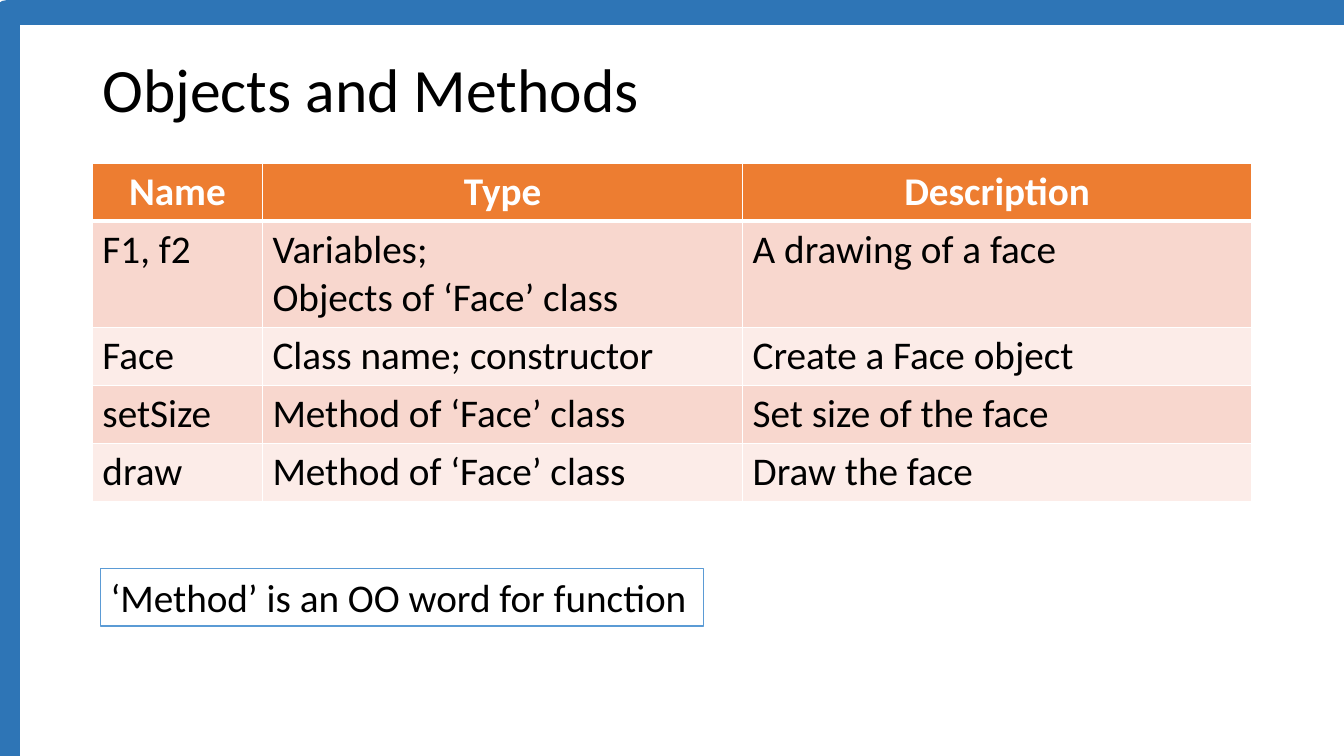
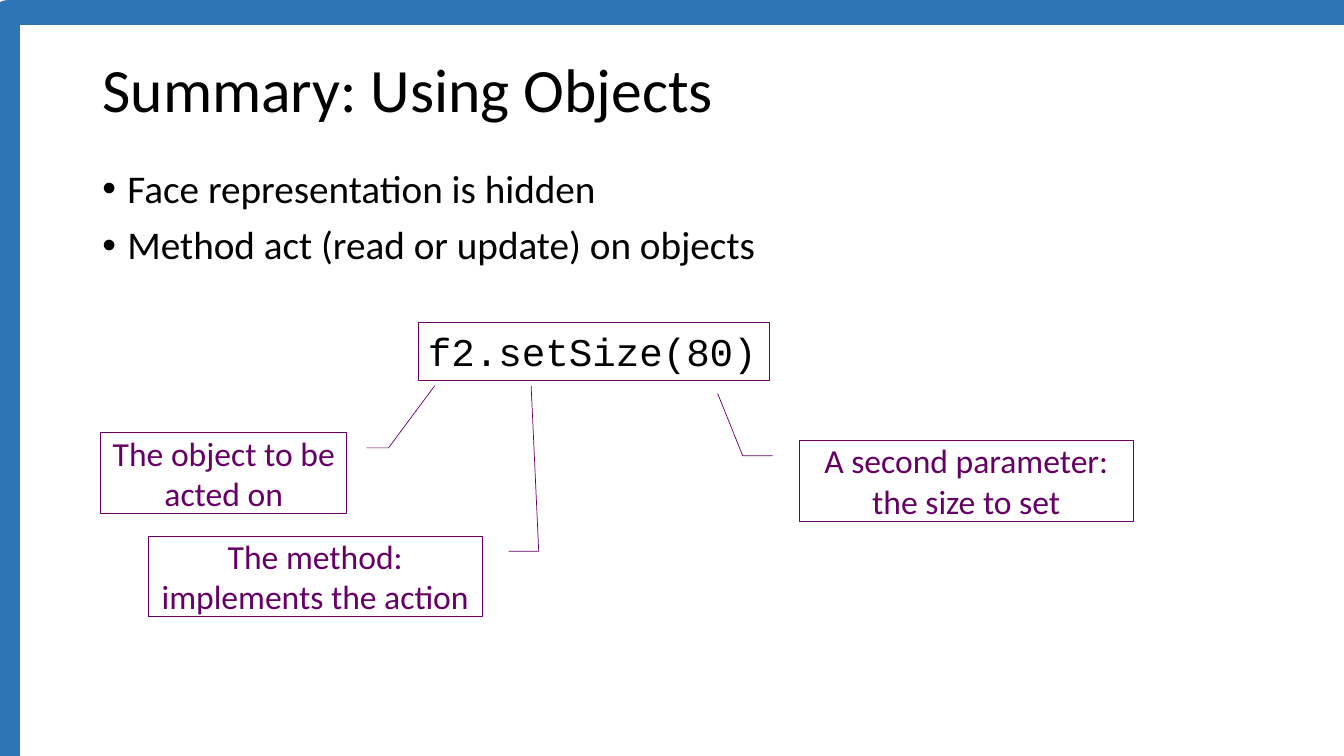
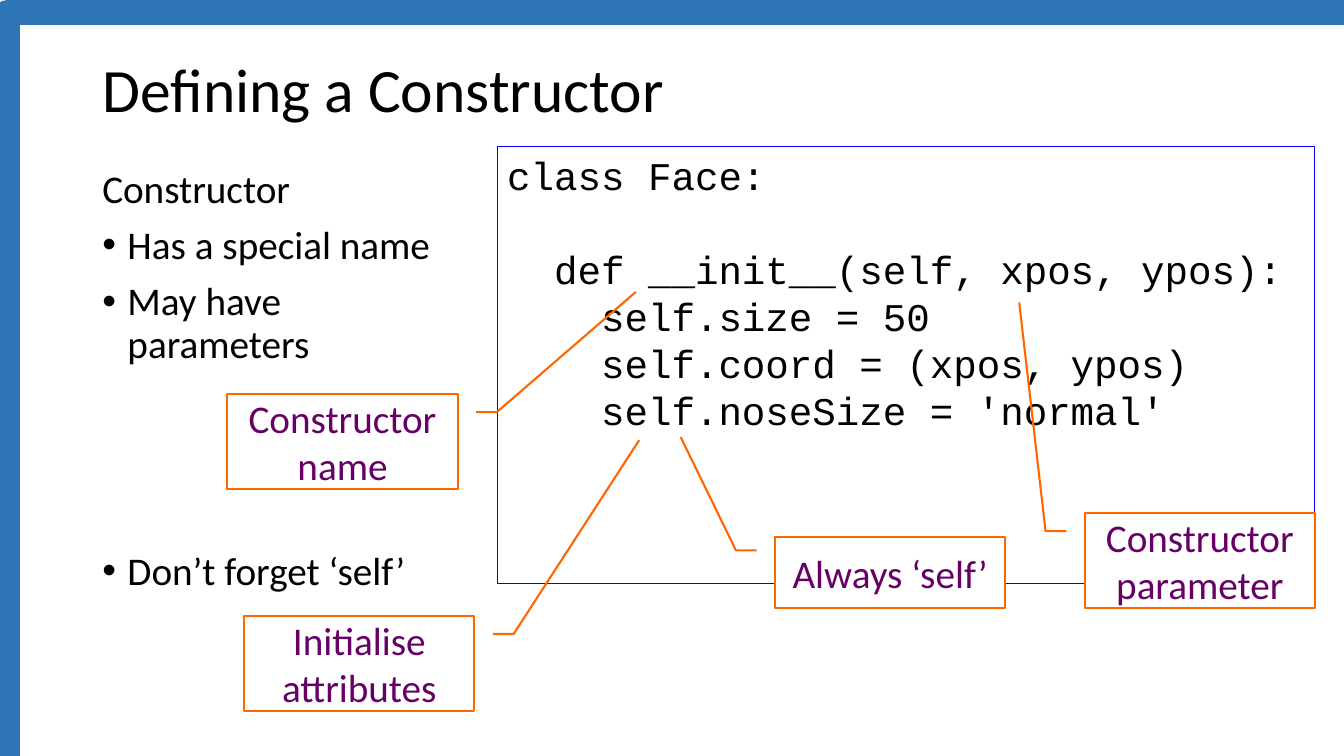
from dataclasses import dataclass
from typing import Optional

from lxml import etree
from pptx import Presentation
from pptx.dml.color import RGBColor
from pptx.enum.shapes import MSO_SHAPE
from pptx.enum.text import MSO_ANCHOR, MSO_AUTO_SIZE, PP_ALIGN
from pptx.oxml.ns import qn
from pptx.shapes.base import BaseShape
from pptx.slide import Slide
from pptx.table import _Cell
from pptx.text.text import TextFrame, _Paragraph
from pptx.util import Pt

RECTANGLE, CALLOUT = MSO_SHAPE.RECTANGLE, MSO_SHAPE.LINE_CALLOUT_2
LEFT, CENTER = PP_ALIGN.LEFT, PP_ALIGN.CENTER
TOP, MIDDLE = MSO_ANCHOR.TOP, MSO_ANCHOR.MIDDLE
FIT_SHAPE, NO_FIT = MSO_AUTO_SIZE.SHAPE_TO_FIT_TEXT, MSO_AUTO_SIZE.NONE

BLACK, WHITE = "000000", "FFFFFF"
FRAME_BLUE, NOTE_BLUE, CODE_BLUE = "2E75B6", "5B9BD5", "0000FF"
PURPLE, ORANGE = "660066", "FF6600"
HEADER_FILL, BAND_FILLS = "ED7D31", ("F8D7CE", "FCECE8")

TITLE_ONLY = 5
MARGIN, CONTENT_WIDTH = 66, 828
BULLET_INDENT = 18
LEADER_HEIGHT, LEADER_START, LEADER_BEND = 0.19, 0.08, 0.17


@dataclass(frozen=True)
class Box:
    left: float
    top: float
    width: float
    height: float

    def lengths(self) -> tuple[Pt, Pt, Pt, Pt]:
        return Pt(self.left), Pt(self.top), Pt(self.width), Pt(self.height)


@dataclass(frozen=True)
class Style:
    size: float = 28
    font: str = "Calibri"
    color: str = BLACK
    bold: bool = False
    align: PP_ALIGN = LEFT
    spacing: Optional[float] = None


@dataclass(frozen=True)
class Line:
    text: str
    space_before: float = 0
    bulleted: bool = False


@dataclass(frozen=True)
class Callout:
    text: str
    box: Box
    tip: tuple[float, float]
    fill: Optional[str] = None


TITLE_STYLE = Style(size=44, spacing=0.9)
BODY_STYLE = Style(spacing=0.9)
CELL_STYLE = Style()
HEADER_STYLE = Style(color=WHITE, bold=True, align=CENTER)
CODE_STYLE = Style(font="Courier New")


def rgb(value: str) -> RGBColor:
    return RGBColor.from_string(value)


# Text
def add_bullet(paragraph: _Paragraph) -> None:
    properties = paragraph._p.get_or_add_pPr()
    properties.set("marL", str(Pt(BULLET_INDENT)))
    properties.set("indent", str(-Pt(BULLET_INDENT)))
    etree.SubElement(properties, qn("a:buFont"), typeface="Arial")
    etree.SubElement(properties, qn("a:buChar"), char="•")


def write(frame: TextFrame, lines: list[Line], style: Style) -> None:
    for index, line in enumerate(lines):
        paragraph = frame.add_paragraph() if index else frame.paragraphs[0]
        if line.bulleted:
            add_bullet(paragraph)
        paragraph.alignment = style.align
        paragraph.space_before = Pt(line.space_before)
        if style.spacing:
            paragraph.line_spacing = style.spacing
        for part_index, part in enumerate(line.text.split("\n")):
            if part_index:
                paragraph.add_line_break()
            run = paragraph.add_run()
            run.text = part
            run.font.size = Pt(style.size)
            run.font.name = style.font
            run.font.bold = style.bold
            run.font.color.rgb = rgb(style.color)


# Shapes
def paint(shape: BaseShape, fill: Optional[str], line: str, width: float) -> None:
    if fill:
        shape.fill.solid()
        shape.fill.fore_color.rgb = rgb(fill)
    else:
        shape.fill.background()
    shape.line.color.rgb = rgb(line)
    shape.line.width = Pt(width)


def add_text(slide: Slide, box: Box, lines: list[Line], style: Style,
             wrap: bool = True) -> BaseShape:
    shape = slide.shapes.add_textbox(*box.lengths())
    frame = shape.text_frame
    frame.word_wrap = wrap
    frame.auto_size = NO_FIT if wrap else FIT_SHAPE
    write(frame, lines, style)
    return shape


def add_callout(slide: Slide, callout: Callout, style: Style,
                line: str, width: float) -> None:
    box = callout.box
    shape = slide.shapes.add_shape(CALLOUT, *box.lengths())
    shape.shadow.inherit = False
    paint(shape, callout.fill, line, width)
    # The leader leaves from the side that faces its tip
    tip_x = (callout.tip[0] - box.left) / box.width
    tip_y = (callout.tip[1] - box.top) / box.height
    start, bend = -LEADER_START, -LEADER_BEND
    if tip_x > 1:
        start, bend = 1 + LEADER_START, 1 + LEADER_BEND
    values = (LEADER_HEIGHT, start, LEADER_HEIGHT, bend, tip_y, tip_x)
    for index, value in enumerate(values):
        shape.adjustments[index] = value
    frame = shape.text_frame
    frame.word_wrap = True
    frame.vertical_anchor = MIDDLE
    frame.margin_left = frame.margin_right = Pt(3)
    frame.margin_top = frame.margin_bottom = Pt(3.6)
    write(frame, [Line(callout.text)], style)


# Table
def add_borders(cell: _Cell, bottom: float) -> None:
    properties = cell._tc.get_or_add_tcPr()
    for tag, width in (("lnL", 1), ("lnR", 1), ("lnT", 1), ("lnB", bottom)):
        border = etree.SubElement(properties, qn(f"a:{tag}"), w=str(Pt(width)))
        fill = etree.SubElement(border, qn("a:solidFill"))
        etree.SubElement(fill, qn("a:srgbClr"), val=WHITE)


def add_table(slide: Slide, box: Box, widths: list[float], heights: list[float],
              rows: list[tuple[str, ...]]) -> None:
    table = slide.shapes.add_table(len(rows), len(widths), *box.lengths()).table
    table.horz_banding = False
    for column, width in zip(table.columns, widths):
        column.width = Pt(width)
    for row_index, texts in enumerate(rows):
        header = row_index == 0
        table.rows[row_index].height = Pt(heights[row_index])
        for column_index, text in enumerate(texts):
            cell = table.cell(row_index, column_index)
            add_borders(cell, 3 if header else 1)
            cell.fill.solid()
            fill = HEADER_FILL if header else BAND_FILLS[(row_index - 1) % 2]
            cell.fill.fore_color.rgb = rgb(fill)
            cell.vertical_anchor = MIDDLE if header else TOP
            write(cell.text_frame, [Line(text)],
                  HEADER_STYLE if header else CELL_STYLE)


# Shared slide: blue frame and title
def new_slide(presentation: Presentation, title: str) -> Slide:
    slide = presentation.slides.add_slide(presentation.slide_layouts[TITLE_ONLY])
    border = slide.shapes.add_shape(RECTANGLE, *Box(5, 9.2, 964, 543.6).lengths())
    border.shadow.inherit = False
    paint(border, None, FRAME_BLUE, 18)
    placeholder = slide.shapes.title
    placeholder.left, placeholder.top, placeholder.width, placeholder.height = Box(
        MARGIN, 28.8, CONTENT_WIDTH, 75).lengths()
    placeholder.text_frame.vertical_anchor = MIDDLE
    write(placeholder.text_frame, [Line(title)], TITLE_STYLE)
    return slide


def build_methods(presentation: Presentation) -> None:
    slide = new_slide(presentation, "Objects and Methods")
    rows = [
        ("Name", "Type", "Description"),
        ("F1, f2", "Variables;\nObjects of ‘Face’ class", "A drawing of a face"),
        ("Face", "Class name; constructor", "Create a Face object"),
        ("setSize", "Method of ‘Face’ class", "Set size of the face"),
        ("draw", "Method of ‘Face’ class", "Draw the face"),
    ]
    heights = [41.4, 75.6, 41.4, 41.4, 41.4]
    add_table(slide, Box(MARGIN, 116.6, CONTENT_WIDTH, sum(heights)),
              [121.5, 343, 363.5], heights, rows)
    note = add_text(slide, Box(72, 406, 430.6, 41.2),
                    [Line("‘Method’ is an OO word for function")], CELL_STYLE,
                    wrap=False)
    paint(note, WHITE, NOTE_BLUE, 1)


def build_summary(presentation: Presentation) -> None:
    slide = new_slide(presentation, "Summary: Using Objects")
    add_text(slide, Box(MARGIN, 117.4, CONTENT_WIDTH, 175.6), [
        Line("Face representation is hidden", bulleted=True),
        Line("Method act (read or update) on objects", 10, True),
    ], BODY_STYLE)
    code = add_text(slide, Box(298.6, 230.4, 251.4, 41.2),
                    [Line("f2.setSize(80)")], CODE_STYLE, wrap=False)
    paint(code, None, PURPLE, 0.75)
    style = Style(size=24, color=PURPLE, align=CENTER)
    for callout in (
        Callout("The object to be acted on", Box(72, 309, 175.7, 57.6),
                (310.6, 275.5)),
        Callout("The method: implements the action", Box(106, 382.8, 238.3, 57.6),
                (379.4, 275.8)),
        Callout("A second parameter: the size to set",
                Box(571, 314.6, 238.3, 57.6), (512.6, 281.1)),
    ):
        add_callout(slide, callout, style, PURPLE, 0.5)


def build_constructor(presentation: Presentation) -> None:
    slide = new_slide(presentation, "Defining a Constructor")
    add_text(slide, Box(MARGIN, 117.4, 266.4, 405.4), [
        Line("Constructor"),
        Line("Has a special name", 10, True),
        Line("May have parameters", 10, True),
        Line("Don’t forget ‘self’", 132, True),
    ], BODY_STYLE)
    code = add_text(slide, Box(355.2, 104.6, 584, 312.5), [
        Line("class Face:"),
        Line("  def __init__(self, xpos, ypos):", 33.5),
        Line("    self.size = 50"),
        Line("    self.coord = (xpos, ypos)"),
        Line("    self.noseSize = 'normal'"),
    ], CODE_STYLE)
    paint(code, WHITE, CODE_BLUE, 0.75)
    style = Style(color=PURPLE, align=CENTER)
    for callout in (
        Callout("Constructor name", Box(162.4, 281.5, 164.5, 68), (454.2, 208.5)),
        Callout("Constructor parameter", Box(774.8, 366.5, 164.5, 68),
                (728, 216), WHITE),
        Callout("Always ‘self’", Box(553.6, 383.4, 164.5, 51),
                (486.2, 312.2), WHITE),
        Callout("Initialise attributes", Box(174.4, 440, 164.5, 68), (456.6, 314.4)),
    ):
        add_callout(slide, callout, style, ORANGE, 1.5)


def main() -> None:
    presentation = Presentation()
    presentation.slide_width, presentation.slide_height = Pt(960), Pt(540)
    build_methods(presentation)
    build_summary(presentation)
    build_constructor(presentation)
    presentation.save("out.pptx")


if __name__ == "__main__":
    main()
